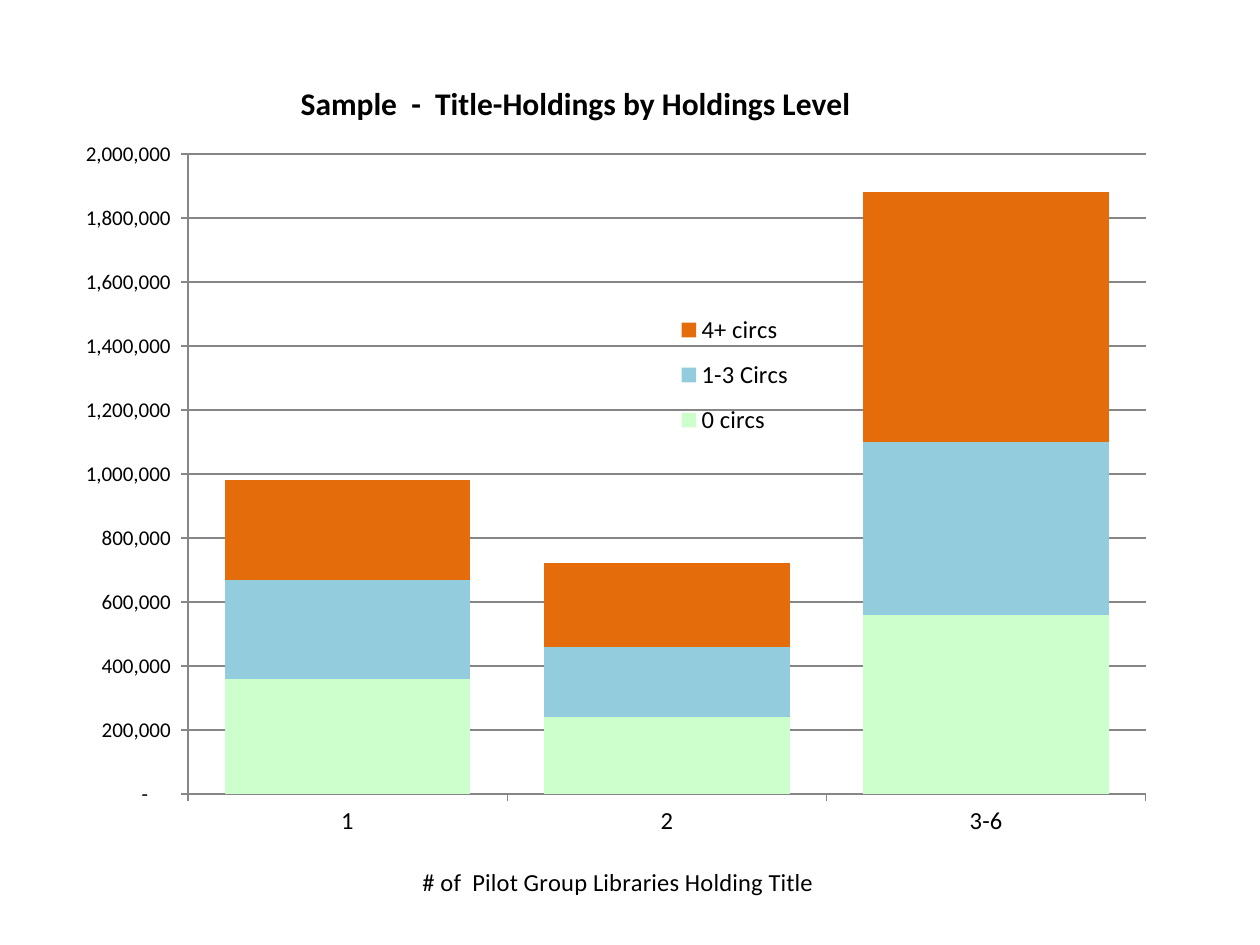
import pptx
import pptx.chart.data
import pptx.dml.color
import pptx.enum.chart
import pptx.oxml
import pptx.oxml.ns
import pptx.util

PX = 914400 / 126
FONT = "Calibri"
COLORS = {
    "text": "000000",
    "line": "868686",
    "0 circs": "CCFFCC",
    "1-3 Circs": "93CDDD",
    "4+ circs": "E46C0A",
}
CATEGORIES = ["1", "2", "3-6"]
SERIES = {
    "0 circs": (360000, 240000, 560000),
    "1-3 Circs": (310000, 220000, 540000),
    "4+ circs": (310000, 260000, 780000),
}
FRAME = (59, 49, 1109, 868)
NUMBER_FORMAT = '_(* #,##0_);_(* \\(#,##0\\);_(* "-"??_);_('


def px(n):
    return pptx.util.Emu(round(n * PX))


def rgb(name):
    return pptx.dml.color.RGBColor.from_string(COLORS[name])


def style_font(font, size, bold=False):
    font.name = FONT
    font.size = pptx.util.Pt(size)
    font.bold = bold
    font.color.rgb = rgb("text")


def style_line(line):
    line.color.rgb = rgb("line")
    line.width = pptx.util.Pt(0.75)


def set_layout(element, index, left, top, width=None, height=None, inner=False):
    for old in element.findall(pptx.oxml.ns.qn("c:layout")):
        element.remove(old)
    x, y, w, h = FRAME
    values = [("x", (left - x) / w), ("y", (top - y) / h)]
    if width:
        values += [("w", width / w), ("h", height / h)]
    target = '<c:layoutTarget val="inner"/>' if inner else ""
    modes = '<c:xMode val="edge"/><c:yMode val="edge"/>'
    places = "".join(f'<c:{tag} val="{value:.4f}"/>' for tag, value in values)
    element.insert(index, pptx.oxml.parse_xml(
        f'<c:layout {pptx.oxml.ns.nsdecls("c")}><c:manualLayout>'
        f"{target}{modes}{places}</c:manualLayout></c:layout>"))


def add_title(owner, text, size, bold, left, top):
    title = owner.chart_title if hasattr(owner, "chart_title") else owner.axis_title
    p = title.text_frame.paragraphs[0]
    r = p.add_run()
    r.text = text
    style_font(r.font, size, bold)
    set_layout(title._element, 1, left, top)


def style_axis(axis, size):
    axis.major_tick_mark = pptx.enum.chart.XL_TICK_MARK.OUTSIDE
    axis.minor_tick_mark = pptx.enum.chart.XL_TICK_MARK.NONE
    style_font(axis.tick_labels.font, size)
    style_line(axis.format.line)


def add_holdings_chart(s):
    data = pptx.chart.data.CategoryChartData(number_format="#,##0")
    data.categories = CATEGORIES
    for name, values in SERIES.items():
        data.add_series(name, values)
    chart = s.shapes.add_chart(
        pptx.enum.chart.XL_CHART_TYPE.COLUMN_STACKED, *map(px, FRAME), data).chart
    style_font(chart.font, 10)
    plot = chart.plots[0]
    plot.gap_width = 30
    plot.overlap = 100
    plot.vary_by_categories = False
    for series in plot.series:
        series.format.fill.solid()
        series.format.fill.fore_color.rgb = rgb(series.name)
    return chart


def style_axes(chart):
    style_axis(chart.category_axis, 14)
    axis = chart.value_axis
    style_axis(axis, 12)
    axis.minimum_scale = 0
    axis.maximum_scale = 2000000
    axis.major_unit = 200000
    axis.has_major_gridlines = True
    style_line(axis.major_gridlines.format.line)
    axis.tick_labels.number_format = NUMBER_FORMAT
    axis.tick_labels.number_format_is_linked = False


def add_legend(chart):
    chart.has_legend = True
    legend = chart.legend
    legend.position = pptx.enum.chart.XL_LEGEND_POSITION.LEFT
    legend.include_in_layout = False
    style_font(legend.font, 14)
    set_layout(legend._element, 1, 660, 300, 150, 150)


def main():
    prs = pptx.Presentation()
    prs.slide_width, prs.slide_height = px(1260), px(945)
    s = prs.slides.add_slide(prs.slide_layouts[6])
    chart = add_holdings_chart(s)
    style_axes(chart)
    add_title(chart, "Sample  -  Title-Holdings by Holdings Level", 18, True, 295, 76)
    add_title(chart.category_axis, "# of  Pilot Group Libraries Holding Title",
              14, False, 418, 861)
    add_legend(chart)
    plot_area = chart._chartSpace.chart.plotArea
    set_layout(plot_area, 0, 188, 154, 958, 640, inner=True)
    prs.save("out.pptx")


if __name__ == "__main__":
    main()
